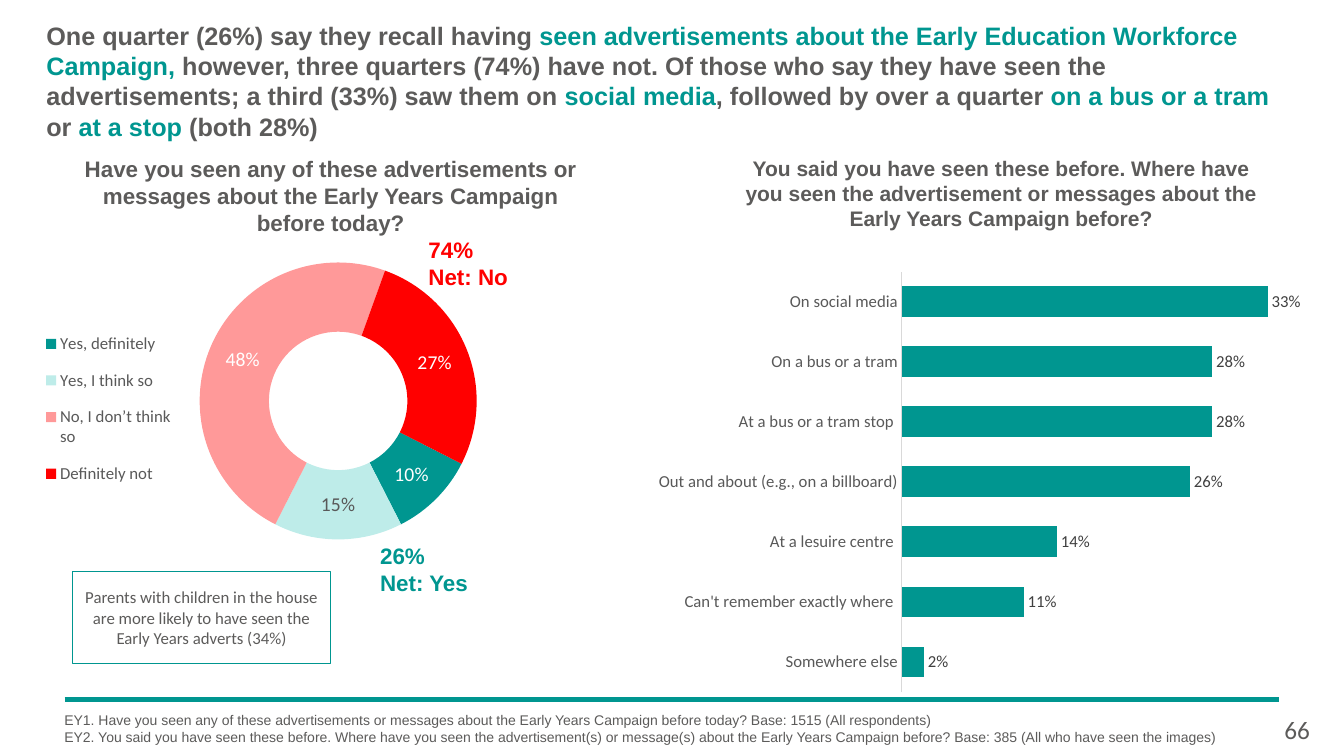
from lxml import etree
from pptx import Presentation, util as u
from pptx.chart.data import CategoryChartData
from pptx.dml.color import RGBColor
from pptx.enum import chart as ch, shapes, text
from pptx.oxml import parse_xml
from pptx.oxml.ns import nsdecls, qn

TEAL, MINT, PINK, RED = "009690", "BEECE9", "FF9999", "FF0000"
GREY, AXIS_GREY, LABEL_GREY = "5C5B5A", "595959", "404040"
rgb = RGBColor.from_string


def write(frame, paragraphs, size=16, font="Arial", color=GREY, bold=False,
          align=None, anchor=text.MSO_ANCHOR.TOP, wrap=True, inset=True):
    """Each paragraph is a string or a list of (words, colour) runs."""
    frame.word_wrap, frame.vertical_anchor = wrap, anchor
    frame.auto_size = text.MSO_AUTO_SIZE.NONE
    if not inset:
        frame.margin_left = frame.margin_right = 0
        frame.margin_top = frame.margin_bottom = 0
    for i, runs in enumerate(paragraphs):
        para = frame.add_paragraph() if i else frame.paragraphs[0]
        para.alignment = align
        for words, tint in [(runs, color)] if isinstance(runs, str) else runs:
            run = para.add_run()
            run.text = words
            run.font.size, run.font.name, run.font.bold = u.Pt(size), font, bold
            run.font.color.rgb = rgb(tint)


def place(parent, index, box, inner=False):
    """Give a plot area or a legend its share of the chart: x, y, w, h."""
    for old in parent.findall(qn("c:layout")):
        parent.remove(old)
    target = '<c:layoutTarget val="inner"/>' if inner else ""
    modes = '<c:xMode val="edge"/><c:yMode val="edge"/>'
    sizes = "".join(f'<c:{k} val="{v}"/>' for k, v in zip("xywh", box))
    parent.insert(index, parse_xml(
        f'<c:layout {nsdecls("c")}><c:manualLayout>{target}{modes}{sizes}'
        '</c:manualLayout></c:layout>'))


deck = Presentation()
deck.slide_width, deck.slide_height = u.Inches(13.33), u.Inches(7.5)
slide = deck.slides.add_slide(deck.slide_layouts[5])

# Headline
headline = slide.shapes.title
headline.left, headline.top = u.Inches(0.46), u.Inches(0.2)
headline.width, headline.height = u.Inches(12.44), u.Inches(1.21)
write(headline.text_frame, [[
    ("One quarter (26%) say they recall having ", GREY),
    ("seen advertisements about the Early Education Workforce Campaign, ", TEAL),
    ("however, three quarters (74%) have not. Of those who say they have seen "
     "the advertisements; a third (33%) saw them on ", GREY),
    ("social media", TEAL),
    (", followed by over a quarter ", GREY),
    ("on a bus or a tram", TEAL),
    (" or ", GREY),
    ("at a stop ", TEAL),
    ("(both 28%)", GREY),
]], size=18, bold=True, align=text.PP_ALIGN.LEFT, inset=False)

# Footer rule
rule = slide.shapes.add_connector(
    shapes.MSO_CONNECTOR.STRAIGHT,
    u.Inches(0.64), u.Inches(6.94), u.Inches(12.69), u.Inches(6.94))
rule.line.color.rgb, rule.line.width = rgb(TEAL), u.Pt(3)
etree.SubElement(rule._element.spPr, qn("a:effectLst"))

# Charts: one series of shares each
charts = []
for kind, box, plot_box, shares in [
    (ch.XL_CHART_TYPE.DOUGHNUT, (0.36, 2.14, 5.3, 3.87),
     (0.28, 0.12, 0.57, 0.71),
     {"Yes, definitely": 0.1, "Yes, I think so ": 0.15,
      "No, I don’t think so ": 0.48, "Definitely not ": 0.27}),
    (ch.XL_CHART_TYPE.BAR_CLUSTERED, (6.26, 2.61, 6.64, 4.3),
     (0.406, 0.02, 0.582, 0.97),
     {"On social media": 0.33, "On a bus or a tram": 0.28,
      "At a bus or a tram stop ": 0.28,
      "Out and about (e.g., on a billboard)": 0.26,
      "At a lesuire centre ": 0.14, "Can't remember exactly where ": 0.11,
      "Somewhere else": 0.02}),
]:
    data = CategoryChartData(number_format="0%")
    data.categories = list(shares)
    data.add_series("Series 1", list(shares.values()))
    chart = slide.shapes.add_chart(kind, *map(u.Inches, box), data).chart
    chart.has_title = chart.has_legend = False
    chart.font.name, chart.font.size = "Calibri", u.Pt(10)
    place(chart._chartSpace.chart.plotArea, 0, plot_box, inner=True)
    plot = chart.plots[0]
    plot.has_data_labels = True
    plot.data_labels.show_value = True
    plot.data_labels.show_percentage = False
    plot.data_labels.number_format = "0%"
    plot.data_labels.number_format_is_linked = False
    charts.append(chart)
recall, channels = charts

# Recall doughnut: slices, labels, legend
ring = recall.plots[0]
ring.vary_by_categories = True
ring._element.find(qn("c:firstSliceAng")).set("val", "117")
ring._element.find(qn("c:holeSize")).set("val", "50")
answers = ring.series[0]
for i, tint in enumerate([TEAL, MINT, PINK, RED]):
    slice_fill = answers.points[i].format.fill
    slice_fill.solid()
    slice_fill.fore_color.rgb = rgb(tint)
pale_label = answers.points[1].data_label
for label_font, tint in [(ring.data_labels.font, "FFFFFF"),
                         (answers.data_labels.font, "FFFFFF"),
                         (pale_label.font, AXIS_GREY)]:
    label_font.size, label_font.name = u.Pt(14), "Calibri"
    label_font.color.rgb = rgb(tint)
answers.data_labels.show_value = True
answers.data_labels.show_percentage = False
recall.has_legend = True
legend = recall.legend
legend.position, legend.include_in_layout = ch.XL_LEGEND_POSITION.LEFT, False
legend.font.size, legend.font.name = u.Pt(12), "Calibri"
legend.font.color.rgb = rgb(AXIS_GREY)
place(legend._element, 1, (0.01, 0.26, 0.25, 0.47))

# Channel bars: fill, labels, axes
bars = channels.plots[0]
bars.gap_width, bars.vary_by_categories = 95, False
bar_fill = bars.series[0].format.fill
bar_fill.solid()
bar_fill.fore_color.rgb = rgb(TEAL)
bars.data_labels.position = ch.XL_LABEL_POSITION.OUTSIDE_END
places, scale = channels.category_axis, channels.value_axis
for axis_font, tint in [(bars.data_labels.font, LABEL_GREY),
                        (places.tick_labels.font, AXIS_GREY)]:
    axis_font.size, axis_font.name = u.Pt(12), "Calibri"
    axis_font.color.rgb = rgb(tint)
places.reverse_order = True
places.major_tick_mark = places.minor_tick_mark = ch.XL_TICK_MARK.NONE
places.format.line.color.rgb = rgb("D9D9D9")
places.format.line.width = u.Pt(0.75)
scale.minimum_scale, scale.maximum_scale = 0, 0.35
scale.has_major_gridlines = scale.visible = False

# Questions, net totals, footnotes and page number
question = dict(bold=True, align=text.PP_ALIGN.CENTER)
net = dict(bold=True, wrap=False, inset=False)
for box, lines, style in [
    ((0.63, 1.49, 5.3, 0.91),
     ["Have you seen any of these advertisements or messages about the "
      "Early Years Campaign before today?"], question),
    ((7.28, 1.49, 5.3, 0.86),
     ["You said you have seen these before. Where have you seen the "
      "advertisement or messages about the Early Years Campaign before?"],
     dict(question, size=15)),
    ((4.25, 2.34, 0.8, 0.54), ["74%", "Net: No"], dict(net, color=RED)),
    ((3.77, 5.38, 0.88, 0.54), ["26%", "Net: Yes"], dict(net, color=TEAL)),
    ((0.54, 7.01, 12.8, 0.56),
     ["EY1. Have you seen any of these advertisements or messages about the "
      "Early Years Campaign before today? Base: 1515 (All respondents)",
      "EY2. You said you have seen these before. Where have you seen the "
      "advertisement(s) or message(s) about the Early Years Campaign before? "
      "Base: 385 (All who have seen the images)"], dict(size=10)),
    ((12.64, 7.04, 0.53, 0.4), ["66"], dict(size=18, font="Calibri")),
]:
    holder = slide.shapes.add_textbox(*map(u.Inches, box))
    write(holder.text_frame, lines, **style)

# Callout on parents
parents = slide.shapes.add_shape(
    shapes.MSO_SHAPE.RECTANGLE, *map(u.Inches, (0.72, 5.67, 2.56, 0.91)))
parents.shadow.inherit = False
parents.fill.background()
parents.line.color.rgb, parents.line.width = rgb(TEAL), u.Pt(1)
write(parents.text_frame,
      ["Parents with children in the house are more likely to have seen the "
       "Early Years adverts (34%)"], size=12, font="Calibri",
      align=text.PP_ALIGN.CENTER, anchor=text.MSO_ANCHOR.MIDDLE)

deck.save("out.pptx")
